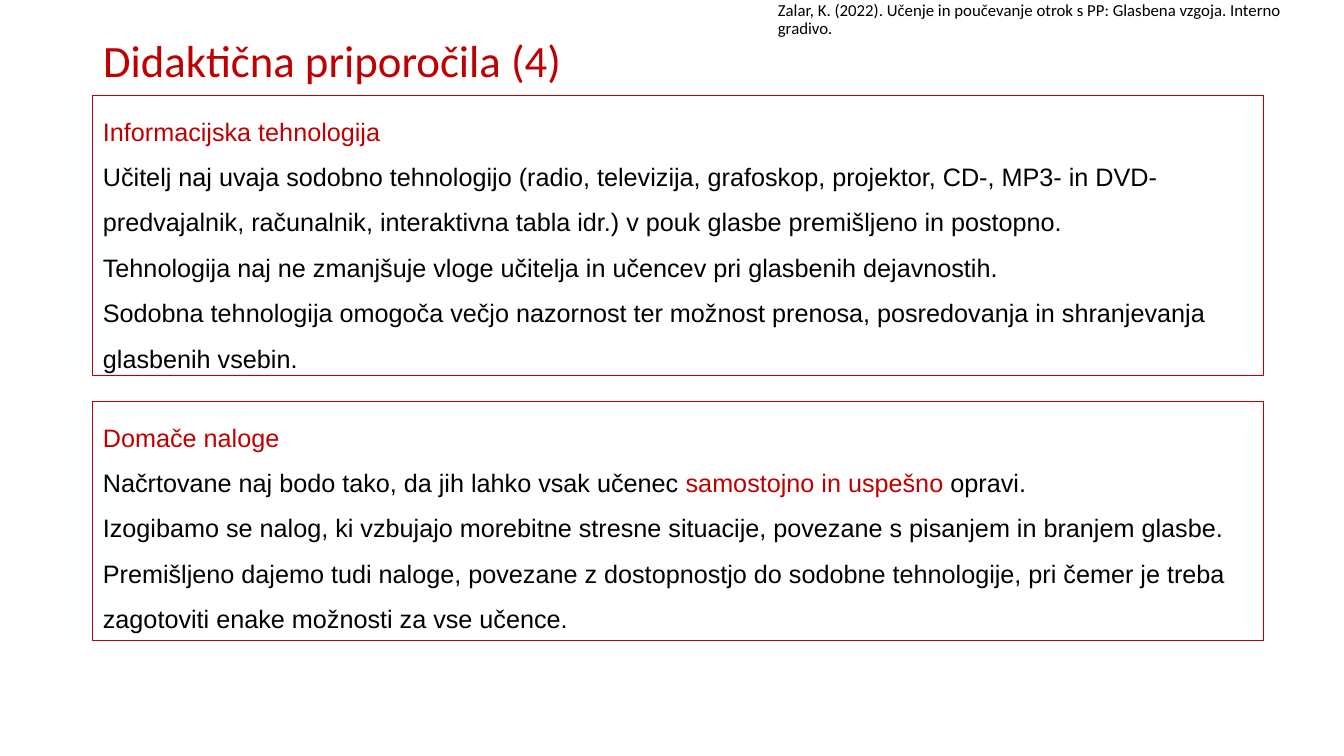
"""Build the slide of didactic recommendations with two framed text boxes."""
from pptx import Presentation
from pptx.dml.color import RGBColor
from pptx.enum import shapes, text
from pptx.util import Emu, Pt

RED = RGBColor(0xC0, 0x00, 0x00)
BLACK = RGBColor(0x00, 0x00, 0x00)
PX = 914400 / 100.8
LEFT, PANEL_WIDTH = 93, 1171

TITLE = [[("Didaktična priporočila (4)", RED)]]
CITATION = [[("Zalar, K. (2022). Učenje in poučevanje otrok s PP: Glasbena vzgoja. "
              "Interno gradivo.", BLACK)]]
PANELS = [
    (96, 280, [
        [("Informacijska tehnologija", RED)],
        [("Učitelj naj uvaja sodobno tehnologijo (radio, televizija, grafoskop, projektor, "
          "CD-, MP3- in DVD-predvajalnik, računalnik, interaktivna tabla idr.) v pouk glasbe "
          "premišljeno in postopno.", BLACK)],
        [("Tehnologija naj ne zmanjšuje vloge učitelja in učencev pri glasbenih "
          "dejavnostih.", BLACK)],
        [("Sodobna tehnologija omogoča večjo nazornost ter možnost prenosa, posredovanja in "
          "shranjevanja glasbenih vsebin.", BLACK)],
    ]),
    (402, 239, [
        [("Domače naloge", RED)],
        [("Načrtovane naj bodo tako, da jih lahko vsak učenec ", BLACK),
         ("samostojno in uspešno ", RED), ("opravi.", BLACK)],
        [("Izogibamo se nalog, ki vzbujajo morebitne stresne situacije, povezane s pisanjem in "
          "branjem glasbe. Premišljeno dajemo tudi naloge, povezane z dostopnostjo do sodobne "
          "tehnologije, pri čemer je treba zagotoviti enake možnosti za vse učence.", BLACK)],
    ]),
]


def px(*lengths):
    return [Emu(round(length * PX)) for length in lengths]


def write(box, paragraphs, font, size, spacing, anchor):
    frame = box.text_frame
    frame.word_wrap = True
    frame.auto_size = text.MSO_AUTO_SIZE.NONE
    frame.vertical_anchor = anchor
    for index, spans in enumerate(paragraphs):
        para = frame.add_paragraph() if index else frame.paragraphs[0]
        para.alignment = text.PP_ALIGN.LEFT
        para.line_spacing = spacing
        para.space_before = para.space_after = Pt(0)
        for words, colour in spans:
            span = para.add_run()
            span.text = words
            span.font.name = font
            span.font.size = Pt(size)
            span.font.color.rgb = colour


def main():
    deck = Presentation()
    deck.slide_width, deck.slide_height = px(1344, 756)
    page = deck.slides.add_slide(deck.slide_layouts[5])

    title = page.shapes.title
    title.left, title.top, title.width, title.height = px(LEFT, 29, 1159, 67)
    write(title, TITLE, "Calibri", 32, 0.9, text.MSO_ANCHOR.MIDDLE)

    citation = page.shapes.add_textbox(*px(768, 0, 576, 40))
    write(citation, CITATION, "Calibri", 12, 0.9, text.MSO_ANCHOR.MIDDLE)

    for top, height, paragraphs in PANELS:
        panel = page.shapes.add_shape(shapes.MSO_SHAPE.RECTANGLE,
                                      *px(LEFT, top, PANEL_WIDTH, height))
        panel.shadow.inherit = False
        panel.fill.background()
        panel.line.color.rgb = RED
        panel.line.width = Pt(0.75)
        write(panel, paragraphs, "Arial", 18, 1.5, text.MSO_ANCHOR.TOP)
        panel.text_frame.auto_size = text.MSO_AUTO_SIZE.SHAPE_TO_FIT_TEXT

    deck.save("out.pptx")


if __name__ == "__main__":
    main()
